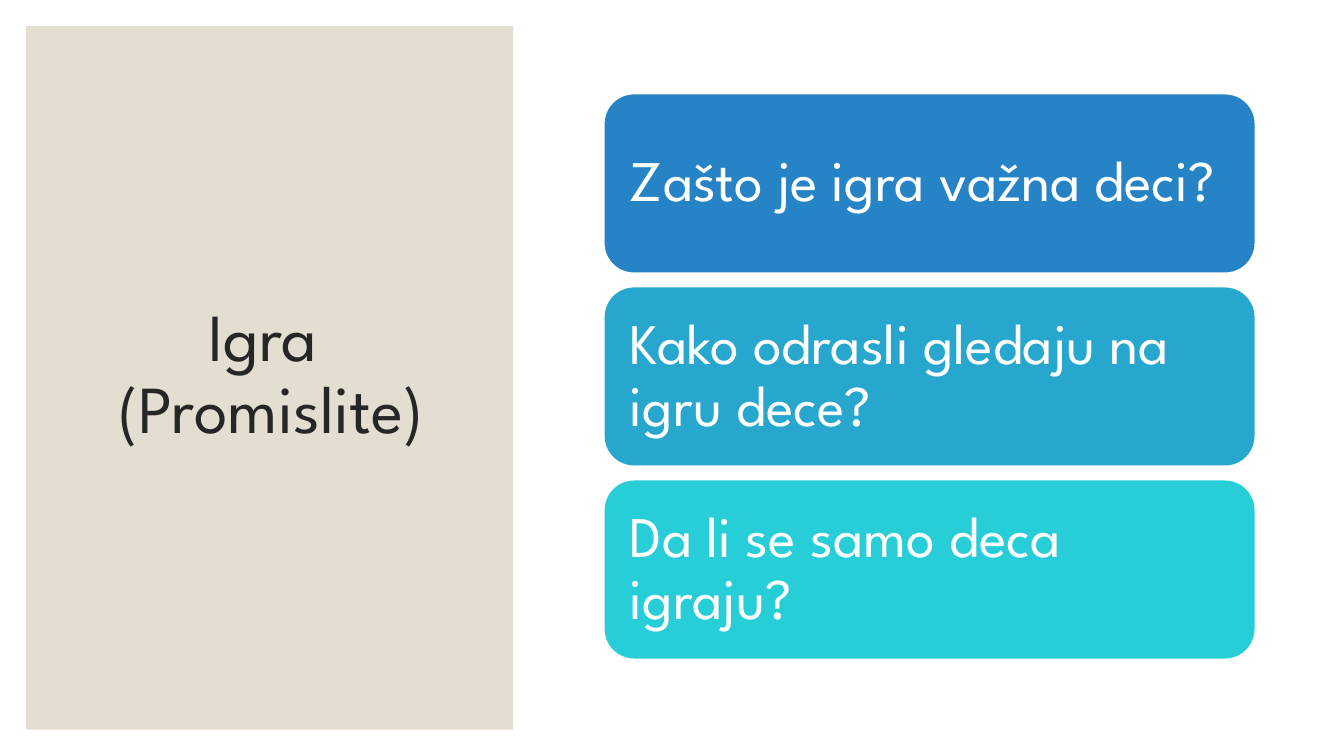
"""Build a slide with a title panel and three question cards."""
from pptx import Presentation
from pptx.dml.color import RGBColor
from pptx.enum.shapes import MSO_SHAPE
from pptx.enum.text import MSO_ANCHOR, PP_ALIGN
from pptx.util import Inches, Pt

TITLE = "Igra \v(Promislite)"
QUESTIONS = [
    ("Zašto je igra važna deci?", "2683C6"),
    ("Kako odrasli gledaju na igru dece?", "27A7CE"),
    ("Da li se samo deca igraju?", "27CED7"),
]
FONT = "League Spartan"
WHITE, PANEL_COLOR, TITLE_COLOR = "FFFFFF", "E3DED1", "262626"
SLIDE_WIDTH, SLIDE_HEIGHT = 13.33, 7.5
MARGIN, PANEL_WIDTH = 0.26, 4.83
CARD_LEFT, CARD_WIDTH, CARD_HEIGHT = 5.99, 6.46, 1.78
CARDS_TOP, CARDS_BOTTOM = 0.93, 6.54


def color(value):
    return RGBColor.from_string(value)


def add_box(slide, kind, box, fill, line=None):
    shape = slide.shapes.add_shape(kind, *map(Inches, box))
    shape.shadow.inherit = False
    shape.fill.solid()
    shape.fill.fore_color.rgb = color(fill)
    if line:
        shape.line.color.rgb = color(line)
        shape.line.width = Pt(1)
    else:
        shape.line.fill.background()
    return shape


def write(shape, text, size, text_color, alignment, inset):
    frame = shape.text_frame
    frame.word_wrap = True
    frame.vertical_anchor = MSO_ANCHOR.MIDDLE
    frame.margin_left = frame.margin_right = Inches(inset)
    frame.margin_top = frame.margin_bottom = Inches(inset)
    frame.text = text
    paragraph = frame.paragraphs[0]
    paragraph.alignment = alignment
    paragraph.line_spacing = 0.9
    paragraph.font.name = FONT
    paragraph.font.size = Pt(size)
    paragraph.font.color.rgb = color(text_color)


def main():
    presentation = Presentation()
    presentation.slide_width = Inches(SLIDE_WIDTH)
    presentation.slide_height = Inches(SLIDE_HEIGHT)
    slide = presentation.slides.add_slide(presentation.slide_layouts[6])
    slide.background.fill.solid()
    slide.background.fill.fore_color.rgb = color(WHITE)

    panel_box = (MARGIN, MARGIN, PANEL_WIDTH, SLIDE_HEIGHT - 2 * MARGIN)
    add_box(slide, MSO_SHAPE.RECTANGLE, panel_box, PANEL_COLOR)
    title_box = slide.shapes.add_textbox(*map(Inches, (0.63, 0.61, 4.12, 6.24)))
    write(title_box, TITLE, 48, TITLE_COLOR, PP_ALIGN.CENTER, 0.1)

    pitch = (CARDS_BOTTOM - CARDS_TOP - CARD_HEIGHT) / (len(QUESTIONS) - 1)
    for row, (question, fill) in enumerate(QUESTIONS):
        card_box = (CARD_LEFT, CARDS_TOP + row * pitch, CARD_WIDTH, CARD_HEIGHT)
        card = add_box(slide, MSO_SHAPE.ROUNDED_RECTANGLE, card_box, fill, WHITE)
        write(card, question, 41, WHITE, PP_ALIGN.LEFT, 0.17)

    presentation.save("out.pptx")


if __name__ == "__main__":
    main()
